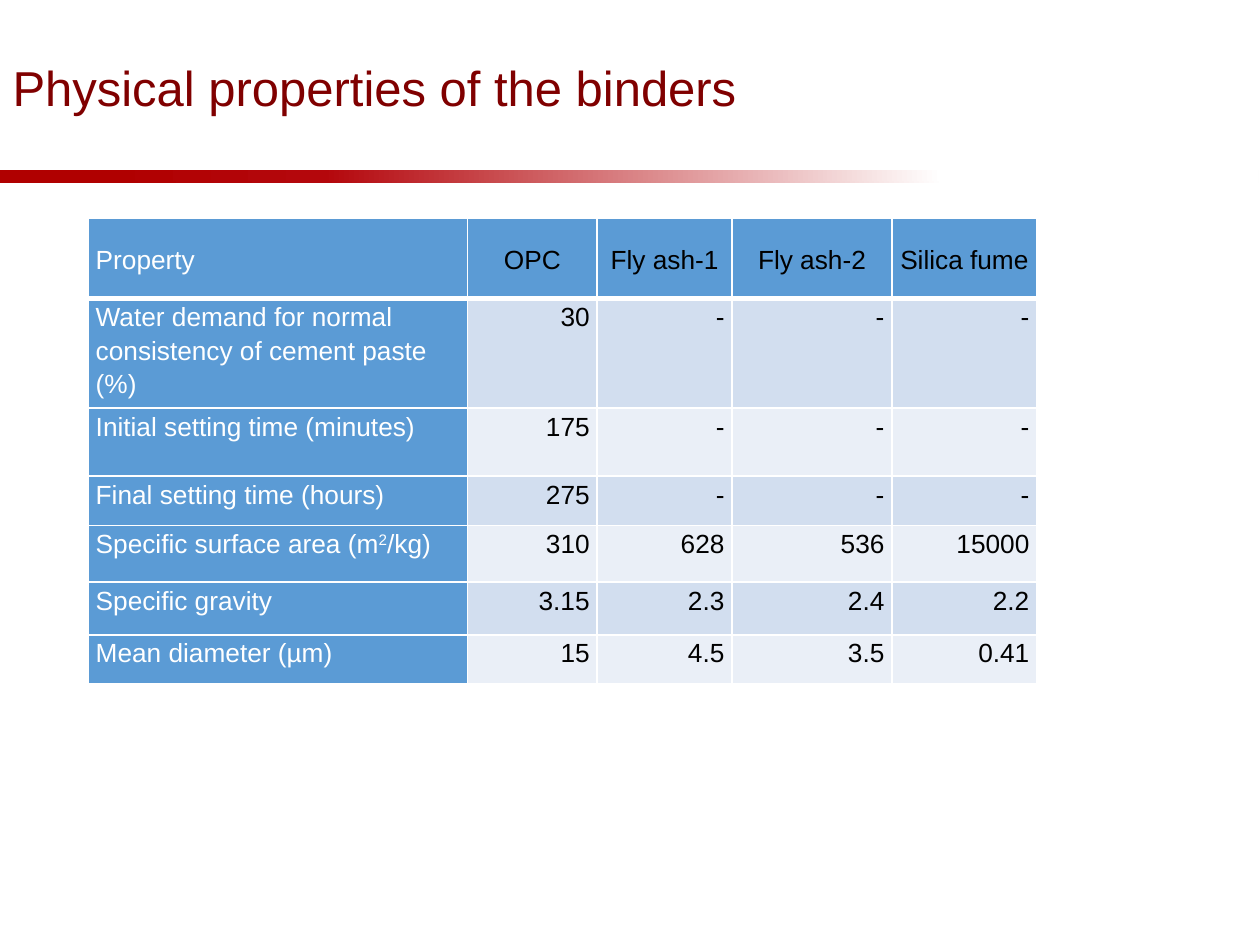
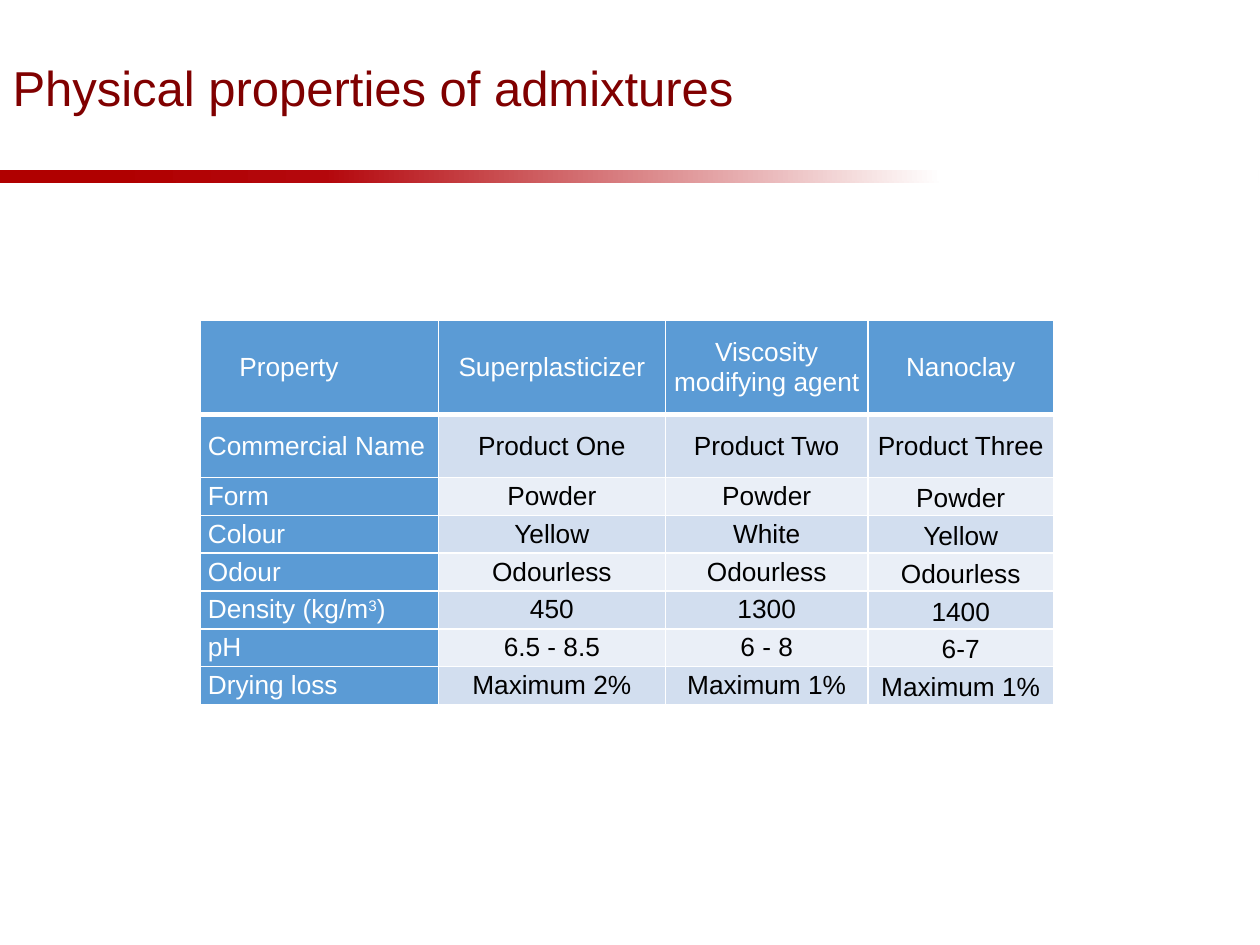
from lxml import etree
from pptx import Presentation
from pptx.dml.color import RGBColor
from pptx.enum.shapes import MSO_SHAPE
from pptx.enum.text import MSO_ANCHOR, PP_ALIGN
from pptx.oxml import parse_xml
from pptx.oxml.ns import nsdecls, qn
from pptx.util import Inches, Pt

RECT = MSO_SHAPE.RECTANGLE
TOP, MID = MSO_ANCHOR.TOP, MSO_ANCHOR.MIDDLE
LEFT, CENTER, RIGHT = PP_ALIGN.LEFT, PP_ALIGN.CENTER, PP_ALIGN.RIGHT
FONT = "Arial"
HUES = {
    "title": "800000", "deep": "B00000", "red": "B4070C", "white": "FFFFFF",
    "black": "000000", "head": "5B9BD5", "odd": "D2DEEF", "even": "EAEFF7",
}
STOPS = [(0, "deep"), (8, "deep"), (26, "red"), (75, "white"), (100, "white")]
BARS = [(0, 1.35, 9.99, 0.1), (-0.03, 1.35, 10.01, 0.09)]

BINDERS = [
    ["Property", "OPC", "Fly ash-1", "Fly ash-2", "Silica fume"],
    ["Water demand for normal consistency of cement paste (%)",
     "30", "-", "-", "-"],
    ["Initial setting time (minutes)", "175", "-", "-", "-"],
    ["Final setting time (hours)", "275", "-", "-", "-"],
    ["Specific surface area (m^2^/kg)", "310", "628", "536", "15000"],
    ["Specific gravity", "3.15", "2.3", "2.4", "2.2"],
    ["Mean diameter (µm)", "15", "4.5", "3.5", "0.41"],
]
ADMIX = [
    ["Property", "Superplasticizer", "Viscosity modifying agent", "Nanoclay"],
    ["Commercial Name", "Product One", "Product Two", "Product Three"],
    ["Form", "Powder", "Powder", "Powder"],
    ["Colour", "Yellow", "White", "Yellow"],
    ["Odour", "Odourless", "Odourless", "Odourless"],
    ["Density (kg/m^3^)", "450", "1300", "1400"],
    ["pH", "6.5 - 8.5", "6 - 8", "6-7"],
    ["Drying loss", "Maximum 2%", "Maximum 1%", "Maximum 1%"],
]


def add_run(para, text, size, hue):
    run = para.add_run()
    run.text = text
    run.font.name = FONT
    run.font.size = Pt(size)
    run.font.bold = False
    run.font.color.rgb = RGBColor.from_string(HUES[hue])
    return run


def add_text(para, text, size, hue):
    """Add runs, raising the parts held between carets."""
    for i, part in enumerate(text.split("^")):
        run = add_run(para, part, size, hue)
        if i % 2:
            run._r.get_or_add_rPr().set("baseline", "30000")


def add_bar(slide, box):
    bar = slide.shapes.add_shape(RECT, *map(Inches, box))
    bar.shadow.inherit = False
    bar.line.fill.background()
    stops = "".join(
        f'<a:gs pos="{pos * 1000}"><a:srgbClr val="{HUES[hue]}"/></a:gs>'
        for pos, hue in STOPS)
    grad = parse_xml(
        f'<a:gradFill {nsdecls("a")} rotWithShape="1"><a:gsLst>{stops}</a:gsLst>'
        '<a:lin ang="0" scaled="0"/></a:gradFill>')
    bar._element.spPr.find(qn("a:prstGeom")).addnext(grad)


def add_slide(deck, text):
    slide = deck.slides.add_slide(deck.slide_layouts[5])
    for box in BARS:
        add_bar(slide, box)
    title = slide.shapes.title
    title.left, title.top = Inches(0), Inches(-0.01)
    title.width, title.height = Inches(8.62), Inches(1.45)
    frame = title.text_frame
    frame.word_wrap = True
    frame.vertical_anchor = MID
    para = frame.paragraphs[0]
    para.alignment = LEFT
    para.line_spacing = 0.9
    add_run(para, text, 28, "title")
    return slide


def set_edges(cell, base):
    props = cell._tc.get_or_add_tcPr()
    for side in "LRTB":
        width = Pt(base if side == "B" else 1)
        line = etree.SubElement(props, qn(f"a:ln{side}"), w=str(width))
        fill = etree.SubElement(line, qn("a:solidFill"))
        etree.SubElement(fill, qn("a:srgbClr"), val=HUES["white"])


def fill_cell(cell, text, back, hue, align, anchor, space):
    set_edges(cell, 3 if cell._tc.row_idx == 0 else 1)
    cell.fill.solid()
    cell.fill.fore_color.rgb = RGBColor.from_string(HUES[back])
    cell.margin_left = cell.margin_right = Inches(0.06)
    cell.margin_top = cell.margin_bottom = 0
    cell.vertical_anchor = anchor
    para = cell.text_frame.paragraphs[0]
    para.alignment = align
    para.line_spacing = space
    add_text(para, text, 15, hue)


def add_grid(slide, rows, spot, wide, high, label, align, anchor, space):
    """Add a table; label colours the heads, space gives each cell its leading."""
    size = sum(wide), sum(high)
    table = slide.shapes.add_table(
        len(rows), len(wide), *map(Inches, spot + size)).table
    table.first_row = table.horz_banding = False
    for col, width in zip(table.columns, wide):
        col.width = Inches(width)
    for r, row in enumerate(rows):
        table.rows[r].height = Inches(high[r])
        band = "odd" if r % 2 else "even"
        for c, text in enumerate(row):
            back = band if r and c else "head"
            hue = "white" if c == 0 else "black" if r else label
            side = LEFT if c == 0 else align if r else CENTER
            fill_cell(table.cell(r, c), text, back, hue, side,
                      anchor if r else MID, space(r, c))
    return table


def main():
    deck = Presentation()
    deck.slide_width, deck.slide_height = Inches(10), Inches(7.5)

    slide = add_slide(deck, "Physical properties of the binders")
    add_grid(slide, BINDERS, (0.7, 1.73), (3.01, 1.03, 1.07, 1.27, 1.15),
             (0.64, 0.87, 0.54, 0.39, 0.45, 0.42, 0.39),
             "black", RIGHT, TOP, lambda r, c: 1.15)

    slide = add_slide(deck, "Physical properties of admixtures")
    table = add_grid(slide, ADMIX, (1.59, 2.54), (1.89, 1.8, 1.61, 1.47),
                     (0.75, 0.5) + (0.3,) * 6, "white", CENTER, MID,
                     lambda r, c: 1.15 if r > 1 and c == 3 else 1.0)
    para = table.cell(0, 0).text_frame.paragraphs[0]
    para._p.get_or_add_pPr().set("indent", str(Inches(0.25)))

    deck.save("out.pptx")


if __name__ == "__main__":
    main()
